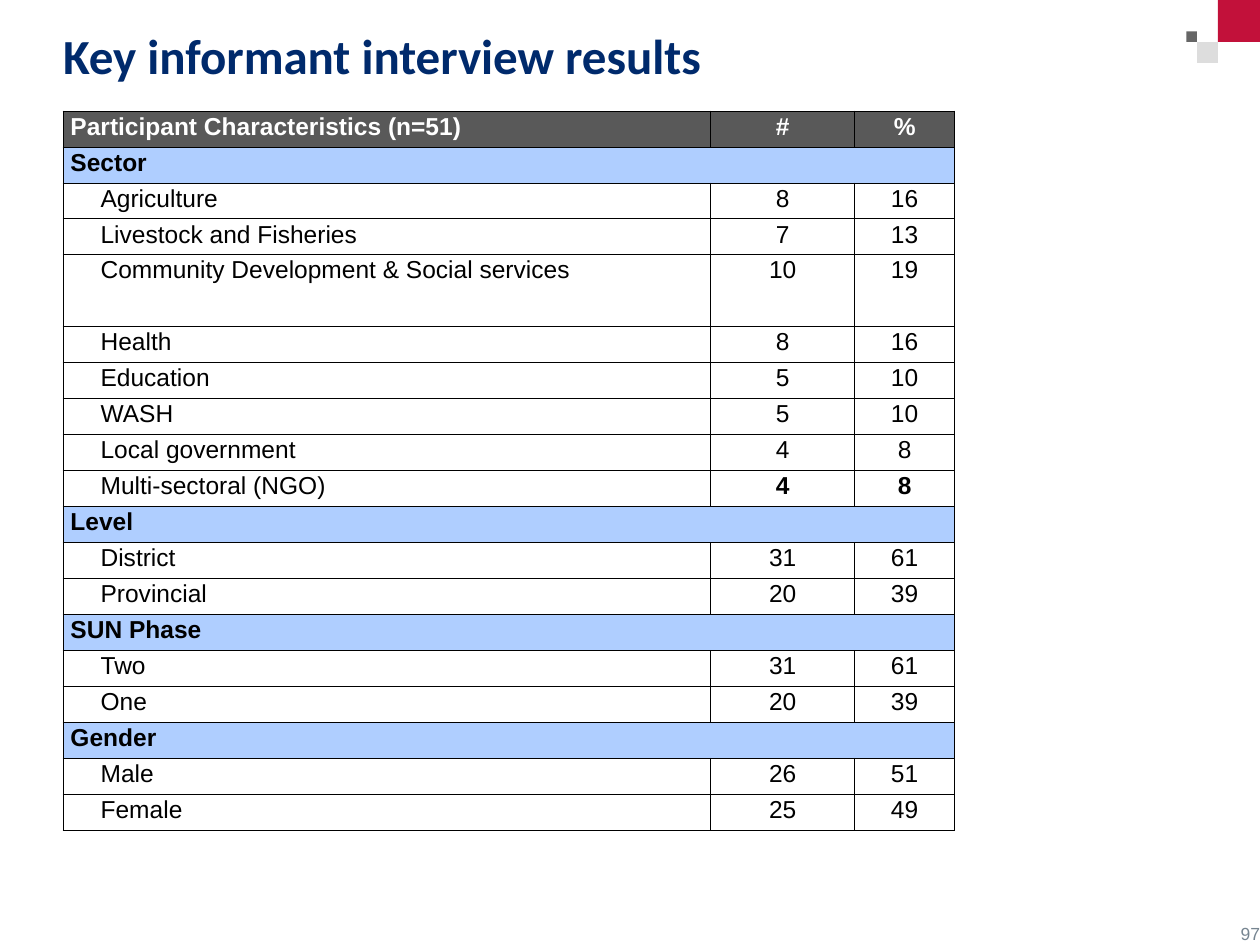
from pptx import Presentation
from pptx.dml.color import RGBColor
from pptx.enum.shapes import MSO_SHAPE as Preset
from pptx.enum.text import MSO_ANCHOR as Anchor, PP_ALIGN as Align
from pptx.oxml import parse_xml
from pptx.oxml.ns import nsdecls
from pptx.util import Pt

ROW_HEIGHT = 20.57
COLUMN_WIDTHS = (370.2, 82.2, 57.2)
HEADER = ("Participant Characteristics (n=51)", "#", "%")
GROUPS = {
    "Sector": [
        ("Agriculture", 8, 16),
        ("Livestock and Fisheries", 7, 13),
        ("Community Development & Social services", 10, 19),
        ("Health", 8, 16),
        ("Education", 5, 10),
        ("WASH", 5, 10),
        ("Local government", 4, 8),
        ("Multi-sectoral (NGO)", 4, 8),
    ],
    "Level": [("District", 31, 61), ("Provincial", 20, 39)],
    "SUN Phase": [("Two", 31, 61), ("One", 20, 39)],
    "Gender": [("Male", 26, 51), ("Female", 25, 49)],
}
TALL_ROW = "Community Development & Social services"
BOLD_COUNTS_ROW = "Multi-sectoral (NGO)"


def color(hex_code):
    return RGBColor.from_string(hex_code)


def write(frame, text, size=14, font="Arial", ink="000000", bold=False,
          align=Align.LEFT, spacing=None, indent=0):
    paragraph = frame.paragraphs[0]
    paragraph.alignment = align
    if spacing:
        paragraph.line_spacing = spacing
    if indent:
        paragraph._p.get_or_add_pPr().set("marL", str(Pt(indent)))
    run = paragraph.add_run()
    run.text = text
    run.font.size = Pt(size)
    run.font.name = font
    run.font.bold = bold
    run.font.color.rgb = color(ink)


def place(shape, left, top, width, height):
    shape.left, shape.top = Pt(left), Pt(top)
    shape.width, shape.height = Pt(width), Pt(height)


def clear_margins(frame, anchor):
    frame.margin_left = frame.margin_right = 0
    frame.margin_top = frame.margin_bottom = 0
    frame.word_wrap = True
    frame.vertical_anchor = anchor


def add_title(slide):
    title = slide.shapes.title
    place(title, 36, 14.4, 641.5, 56.2)
    clear_margins(title.text_frame, Anchor.TOP)
    write(title.text_frame, "Key informant interview results",
          size=28, font="Calibri", ink="002A6C", bold=True)


def add_page_number(slide):
    number = slide.shapes.add_textbox(Pt(696), Pt(518), Pt(24), Pt(21.6))
    clear_margins(number.text_frame, Anchor.BOTTOM)
    write(number.text_frame, "97", size=10, ink="768591", align=Align.RIGHT)


def add_square(slide, left, top, side, fill):
    square = slide.shapes.add_shape(
        Preset.RECTANGLE, Pt(left), Pt(top), Pt(side), Pt(side))
    square.shadow.inherit = False
    square.fill.solid()
    square.fill.fore_color.rgb = color(fill)
    square.line.fill.background()


def style_cell(cell, fill):
    cell.margin_left = cell.margin_right = Pt(4.3)
    cell.margin_top = cell.margin_bottom = 0
    properties = cell._tc.get_or_add_tcPr()
    for edge in ("lnL", "lnR", "lnT", "lnB"):
        properties.append(parse_xml(
            f'<a:{edge} {nsdecls("a")} w="{Pt(0.5)}"><a:solidFill>'
            f'<a:srgbClr val="000000"/></a:solidFill></a:{edge}>'))
    if fill:
        cell.fill.solid()
        cell.fill.fore_color.rgb = color(fill)
    else:
        cell.fill.background()


def fill_row(table, index, values, fill=None, ink="000000", bold_label=False,
             bold_counts=False, indent=0):
    for column in range(len(COLUMN_WIDTHS)):
        style_cell(table.cell(index, column), fill)
    label, *counts = values
    write(table.cell(index, 0).text_frame, label, ink=ink, bold=bold_label,
          spacing=1.07, indent=indent)
    for column, count in enumerate(counts, 1):
        write(table.cell(index, column).text_frame, str(count), ink=ink,
              bold=bold_counts, align=Align.CENTER, spacing=1.07)


def add_characteristics(slide):
    row_count = 1 + sum(1 + len(members) for members in GROUPS.values())
    table = slide.shapes.add_table(
        row_count, len(COLUMN_WIDTHS), Pt(36), Pt(63.4),
        Pt(sum(COLUMN_WIDTHS)), Pt(ROW_HEIGHT * (row_count + 1))).table
    table.first_row = table.horz_banding = False
    for column, width in zip(table.columns, COLUMN_WIDTHS):
        column.width = Pt(width)
    for row in table.rows:
        row.height = Pt(ROW_HEIGHT)

    fill_row(table, 0, HEADER, fill="595959", ink="FFFFFF",
             bold_label=True, bold_counts=True)
    index = 1
    for group, members in GROUPS.items():
        fill_row(table, index, (group,), fill="AFCEFF", bold_label=True)
        table.cell(index, 0).merge(table.cell(index, len(COLUMN_WIDTHS) - 1))
        for index, member in enumerate(members, index + 1):
            fill_row(table, index, member, indent=17.2,
                     bold_counts=member[0] == BOLD_COUNTS_ROW)
            if member[0] == TALL_ROW:
                table.rows[index].height = Pt(2 * ROW_HEIGHT)
        index += 1


def main():
    deck = Presentation()
    deck.slide_width, deck.slide_height = Pt(720), Pt(540)
    slide = deck.slides.add_slide(deck.slide_layouts[5])
    add_square(slide, 678, 18, 6, "666666")
    add_square(slide, 684, 24, 12, "DDDDDD")
    add_square(slide, 696, 0, 24, "C2113A")
    add_page_number(slide)
    add_title(slide)
    add_characteristics(slide)
    deck.save("out.pptx")


if __name__ == "__main__":
    main()
